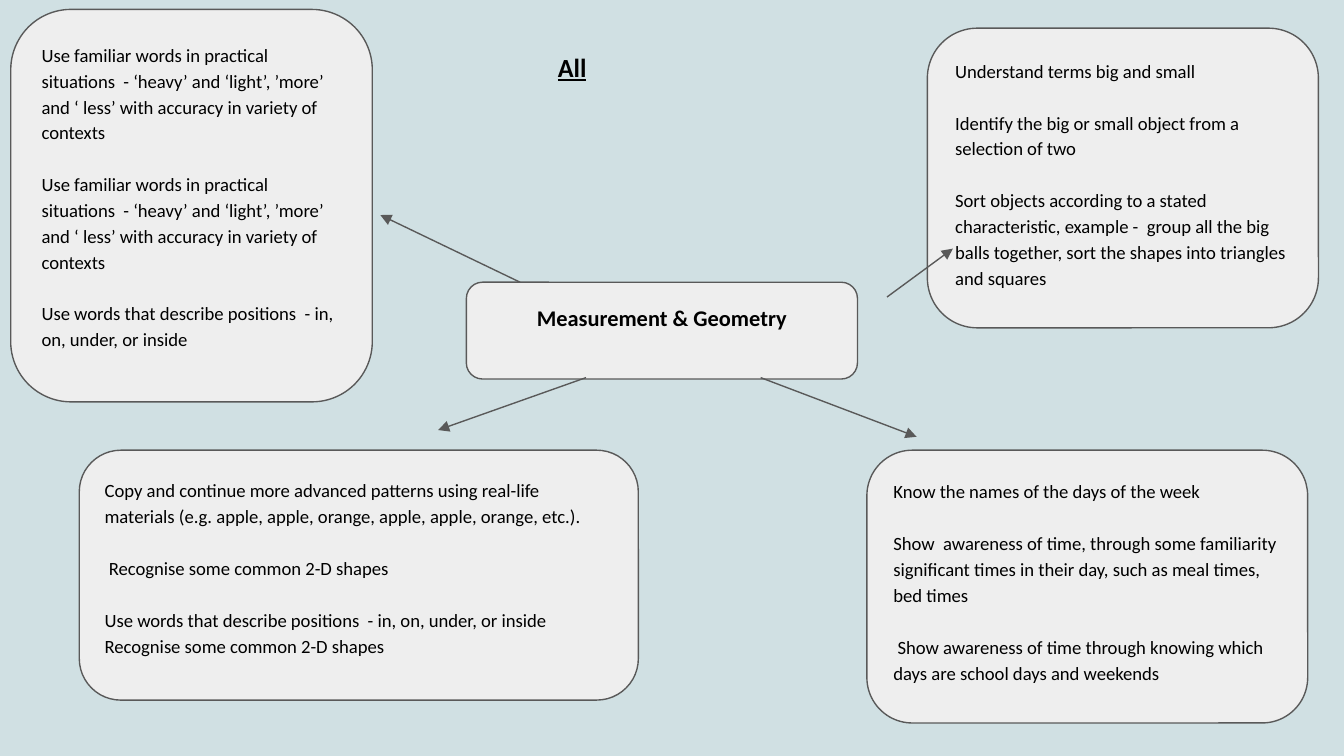
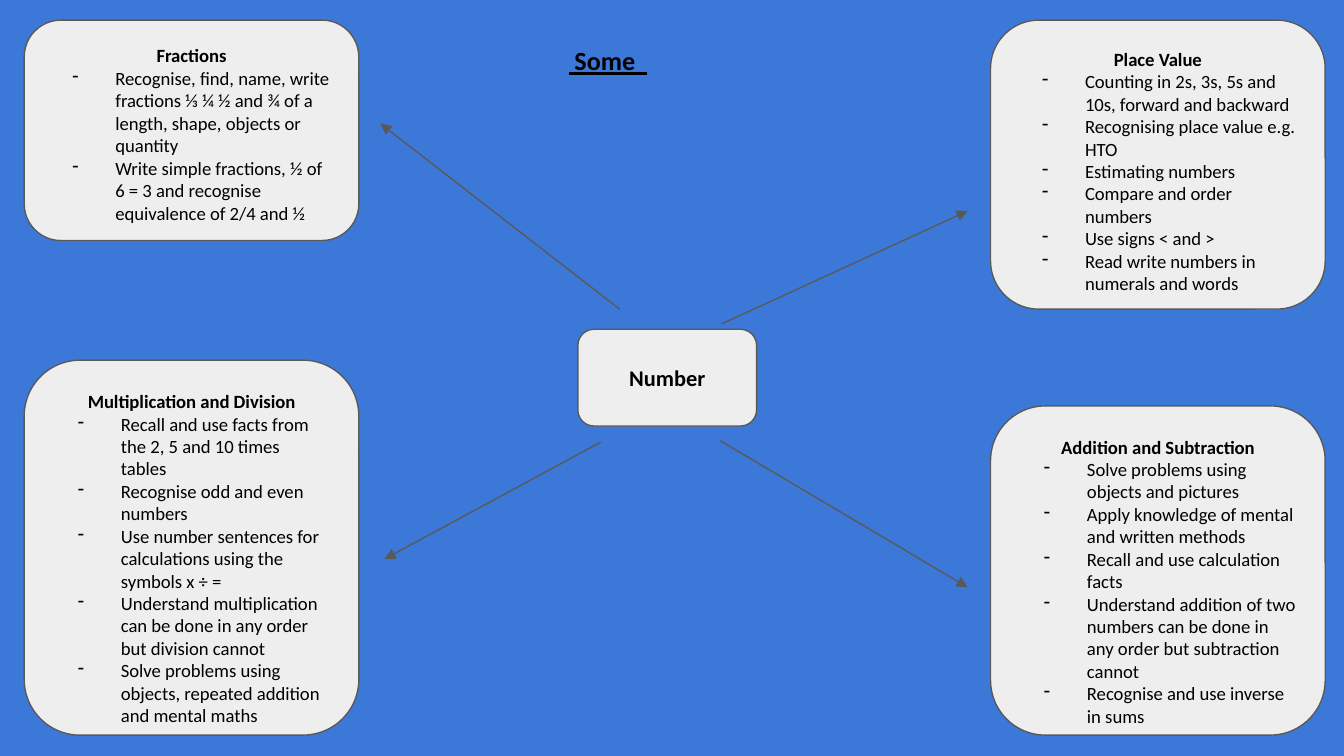
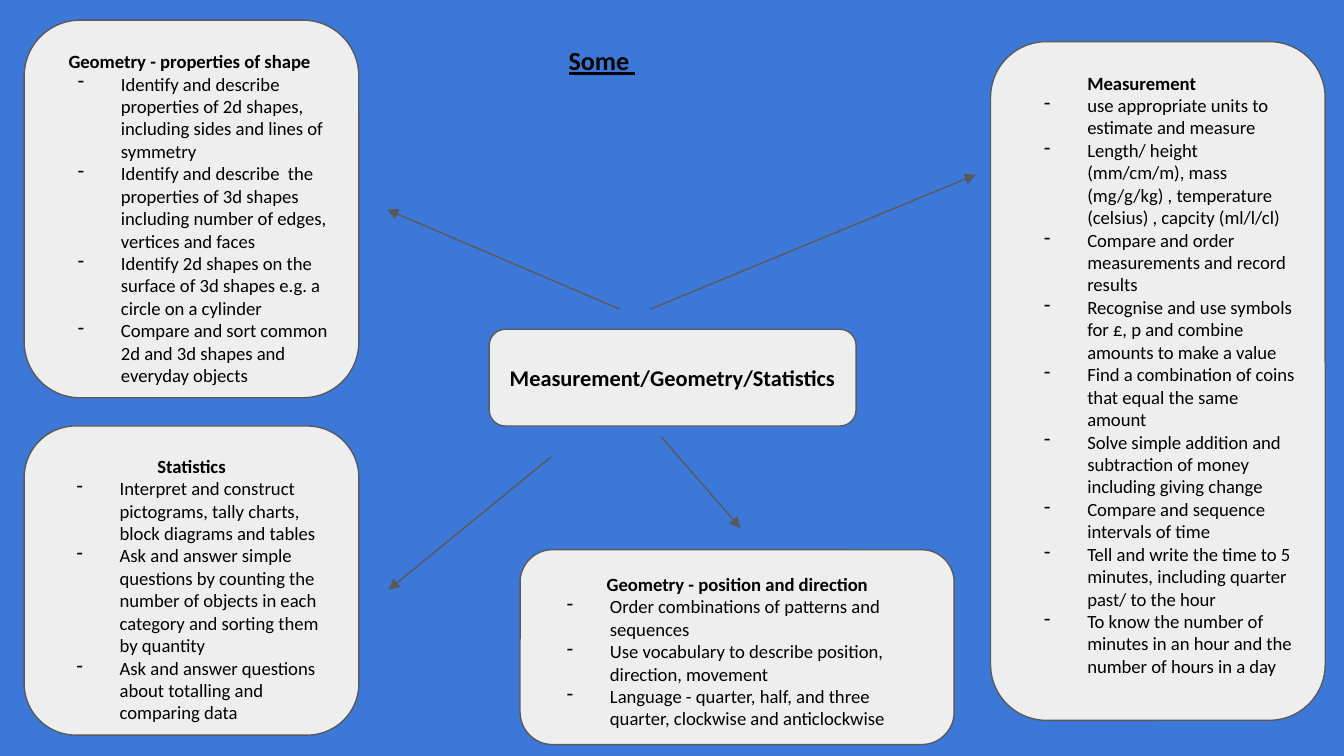
from dataclasses import dataclass

from pptx import Presentation
from pptx.dml.color import RGBColor
from pptx.enum.shapes import MSO_CONNECTOR, MSO_SHAPE
from pptx.enum.text import MSO_ANCHOR, MSO_AUTO_SIZE, PP_ALIGN
from pptx.oxml.ns import qn
from pptx.util import Pt
from lxml import etree

ROUNDED = MSO_SHAPE.ROUNDED_RECTANGLE
STRAIGHT = MSO_CONNECTOR.STRAIGHT
TOP, MIDDLE = MSO_ANCHOR.TOP, MSO_ANCHOR.MIDDLE
LEFT, CENTER = PP_ALIGN.LEFT, PP_ALIGN.CENTER
NO_FIT = MSO_AUTO_SIZE.NONE

# Shared look
EMU_PER_PX = 9144  # 100 px to the inch
SLIDE_W = 1000
FONT = "Calibri"
BLACK, CARD_FILL, LINE = "000000", "EEEEEE", "595959"
PALE, BLUE = "D0E0E3", "3C78D8"
TITLE_PT, HUB_PT, BODY_PT = 14, 12, 10
INSET = 10
INDENT, HANGING = 50, 32
PARAGRAPH_GAP = 14  # points
TITLE_ONLY = 5


@dataclass
class Box:
    x: int
    y: int
    w: int
    h: int


@dataclass
class Card:
    box: Box
    items: list[str]
    heading: str = ""  # a card with a heading lists its items with dashes
    heading_centered: bool = True


@dataclass
class Arrow:
    x1: int
    y1: int
    x2: int
    y2: int


@dataclass
class Hub:
    box: Box
    text: str
    bottom_inset: int = INSET


@dataclass
class Board:
    bg: str
    title: str
    title_box: Box
    hub: Hub
    cards: list[Card]
    arrows: list[Arrow]


SOME_BOX = Box(413, 23, 219, 52)

FAMILIAR_WORDS = ("Use familiar words in practical situations  - ‘heavy’ and ‘light’, "
                  "’more’ and ‘ less’ with accuracy in variety of contexts")

BOARDS = [
    Board(
        PALE, "All", Box(405, 28, 304, 314),
        Hub(Box(347, 210, 291, 72), "Measurement & Geometry", 30),
        [
            Card(Box(690, 21, 291, 223), [
                "Understand terms big and small",
                "Identify the big or small object from a selection of two",
                "Sort objects according to a stated characteristic, example -  group all "
                "the big  balls together, sort the shapes into triangles and squares",
            ]),
            Card(Box(59, 335, 416, 186), [
                "Copy and continue more advanced patterns using real-life materials "
                "(e.g. apple, apple, orange, apple, apple, orange, etc.).",
                " Recognise some common 2-D shapes",
                "Use words that describe positions  - in, on, under, or inside "
                "Recognise some common 2-D shapes",
            ]),
            Card(Box(8, 7, 269, 292), [
                FAMILIAR_WORDS,
                FAMILIAR_WORDS,
                "Use words that describe positions  - in, on, under, or inside",
            ]),
            Card(Box(645, 335, 328, 203), [
                "Know the names of the days of the week",
                "Show  awareness of time, through some familiarity significant times in "
                "their day, such as meal times, bed times",
                " Show awareness of time through knowing which days are school days "
                "and weekends",
            ]),
        ],
        [Arrow(566, 281, 682, 325), Arrow(660, 221, 709, 185),
         Arrow(436, 281, 326, 320), Arrow(387, 210, 283, 160)],
    ),
    Board(
        BLUE, " Some  ", SOME_BOX,
        Hub(Box(430, 245, 133, 72), "Number"),
        [
            Card(Box(737, 15, 249, 215), [
                "Counting in 2s, 3s, 5s and 10s, forward and backward",
                "Recognising place value e.g. HTO",
                "Estimating numbers",
                "Compare and order numbers",
                "Use signs < and >",
                "Read write numbers in numerals and words",
            ], "Place Value"),
            Card(Box(737, 302, 249, 245), [
                "Solve problems using objects and pictures",
                "Apply knowledge of mental and written methods",
                "Recall and use calculation facts",
                "Understand addition of two numbers can be done in any order but "
                "subtraction cannot",
                "Recognise and use inverse in sums",
            ], "Addition and Subtraction"),
            Card(Box(18, 268, 249, 279), [
                "Recall and use facts from the 2, 5 and 10 times tables",
                "Recognise odd and even numbers",
                "Use number sentences for calculations using the symbols x ÷ =",
                "Understand multiplication can be done in any order but division cannot",
                "Solve problems using objects, repeated addition and mental maths",
            ], "Multiplication and Division"),
            Card(Box(18, 15, 249, 164), [
                "Recognise, find, name, write fractions ⅓ ¼ ½ and ¾ of a length, shape, "
                "objects or quantity",
                "Write simple fractions, ½ of 6 = 3 and recognise equivalence of 2/4 and ½",
            ], "Fractions"),
        ],
        [Arrow(537, 241, 720, 157), Arrow(536, 328, 720, 437),
         Arrow(447, 329, 286, 416), Arrow(461, 230, 283, 92)],
    ),
    Board(
        BLUE, "Some ", SOME_BOX,
        Hub(Box(364, 245, 273, 72), "Measurement/Geometry/Statistics"),
        [
            Card(Box(737, 31, 249, 505), [
                "use appropriate units to estimate and measure",
                "Length/ height (mm/cm/m), mass (mg/g/kg) , temperature (celsius) , "
                "capcity (ml/l/cl)",
                "Compare and order measurements and record results",
                "Recognise and use symbols for £, p and combine amounts to make a value",
                "Find a combination of coins that equal the same amount",
                "Solve simple addition and subtraction of money including giving change",
                "Compare and sequence intervals of time",
                "Tell and write the time to 5 minutes, including quarter past/ to the hour",
                "To know the number of minutes in an hour and the number of hours in a day",
            ], "Measurement", heading_centered=False),
            Card(Box(18, 15, 249, 281), [
                "Identify and describe properties of 2d shapes, including sides and "
                "lines of symmetry",
                "Identify and describe  the properties of 3d shapes including number of "
                "edges, vertices and faces",
                "Identify 2d shapes on the surface of 3d shapes e.g. a circle on a cylinder",
                "Compare and sort common 2d and 3d shapes and everyday objects",
            ], "Geometry - properties of shape "),
            Card(Box(387, 409, 323, 145), [
                "Order combinations of patterns and sequences",
                "Use vocabulary to describe position, direction, movement",
                "Language - quarter, half, and three quarter, clockwise and anticlockwise",
            ], "Geometry - position and direction"),
            Card(Box(18, 317, 249, 230), [
                "Interpret and construct pictograms, tally charts, block diagrams and tables",
                "Ask and answer simple questions by counting the number of objects in "
                "each category and sorting them by quantity",
                "Ask and answer questions about totalling and comparing data",
            ], "Statistics"),
        ],
        [Arrow(484, 230, 726, 130), Arrow(461, 230, 288, 156),
         Arrow(410, 340, 289, 439), Arrow(492, 325, 551, 393)],
    ),
]


def px(n: int) -> int:
    return n * EMU_PER_PX


def rgb(color: str) -> RGBColor:
    return RGBColor.from_string(color)


def set_frame(tf, anchor, bottom: int = INSET) -> None:
    tf.word_wrap = True
    tf.auto_size = NO_FIT
    tf.vertical_anchor = anchor
    tf.margin_left = tf.margin_right = tf.margin_top = px(INSET)
    tf.margin_bottom = px(bottom)


def set_text(p, text: str, size: int, bold: bool = False, align=LEFT) -> None:
    p.text = text
    p.alignment = align
    font = p.runs[0].font
    font.name, font.size, font.bold = FONT, Pt(size), bold
    font.color.rgb = rgb(BLACK)


def set_indent(p, left: int, first: int = 0) -> None:
    pPr = p._p.get_or_add_pPr()
    pPr.set("marL", str(px(left)))
    pPr.set("indent", str(px(first)))


def add_dash(p) -> None:
    set_indent(p, INDENT, -HANGING)
    pPr = p._p.get_or_add_pPr()
    color = etree.SubElement(pPr, qn("a:buClr"))
    etree.SubElement(color, qn("a:srgbClr"), val=BLACK)
    etree.SubElement(pPr, qn("a:buChar"), char="-")


def add_panel(s, box: Box):
    sp = s.shapes.add_shape(ROUNDED, px(box.x), px(box.y), px(box.w), px(box.h))
    sp.shadow.inherit = False
    sp.fill.solid()
    sp.fill.fore_color.rgb = rgb(CARD_FILL)
    sp.line.color.rgb = rgb(LINE)
    sp.line.width = Pt(0.75)
    return sp.text_frame


def add_title(s, text: str, box: Box) -> None:
    sp = s.shapes.title
    sp.left, sp.top, sp.width, sp.height = px(box.x), px(box.y), px(box.w), px(box.h)
    set_frame(sp.text_frame, TOP)
    p = sp.text_frame.paragraphs[0]
    set_text(p, text, TITLE_PT, bold=True)
    p.runs[0].font.underline = True


def add_hub(s, hub: Hub) -> None:
    tf = add_panel(s, hub.box)
    set_frame(tf, MIDDLE, hub.bottom_inset)
    set_text(tf.paragraphs[0], hub.text, HUB_PT, bold=True, align=CENTER)


def add_card(s, card: Card) -> None:
    tf = add_panel(s, card.box)
    set_frame(tf, TOP)
    p = tf.paragraphs[0]
    if card.heading:
        set_text(p, card.heading, BODY_PT, True, CENTER if card.heading_centered else LEFT)
        if not card.heading_centered:
            set_indent(p, INDENT)
    for i, item in enumerate(card.items):
        if card.heading or i:
            p = tf.add_paragraph()
        set_text(p, item, BODY_PT)
        if card.heading:
            add_dash(p)
        else:
            p.line_spacing = 1.15
            p.space_before = Pt(PARAGRAPH_GAP if i else 0)


def add_arrow(s, a: Arrow) -> None:
    c = s.shapes.add_connector(STRAIGHT, px(a.x1), px(a.y1), px(a.x2), px(a.y2))
    c.line.color.rgb = rgb(LINE)
    c.line.width = Pt(0.75)
    spPr = c.element.spPr
    etree.SubElement(spPr.get_or_add_ln(), qn("a:tailEnd"), type="triangle", w="med", len="med")
    etree.SubElement(spPr, qn("a:effectLst"))


def add_board(prs, board: Board) -> None:
    s = prs.slides.add_slide(prs.slide_layouts[TITLE_ONLY])
    s.background.fill.solid()
    s.background.fill.fore_color.rgb = rgb(board.bg)
    add_title(s, board.title, board.title_box)
    add_hub(s, board.hub)
    for card in board.cards:
        add_card(s, card)
    for arrow in board.arrows:
        add_arrow(s, arrow)


def main() -> None:
    prs = Presentation()
    prs.slide_width = px(SLIDE_W)
    prs.slide_height = px(SLIDE_W) * 9 // 16
    for board in BOARDS:
        add_board(prs, board)
    prs.save("out.pptx")


if __name__ == "__main__":
    main()
